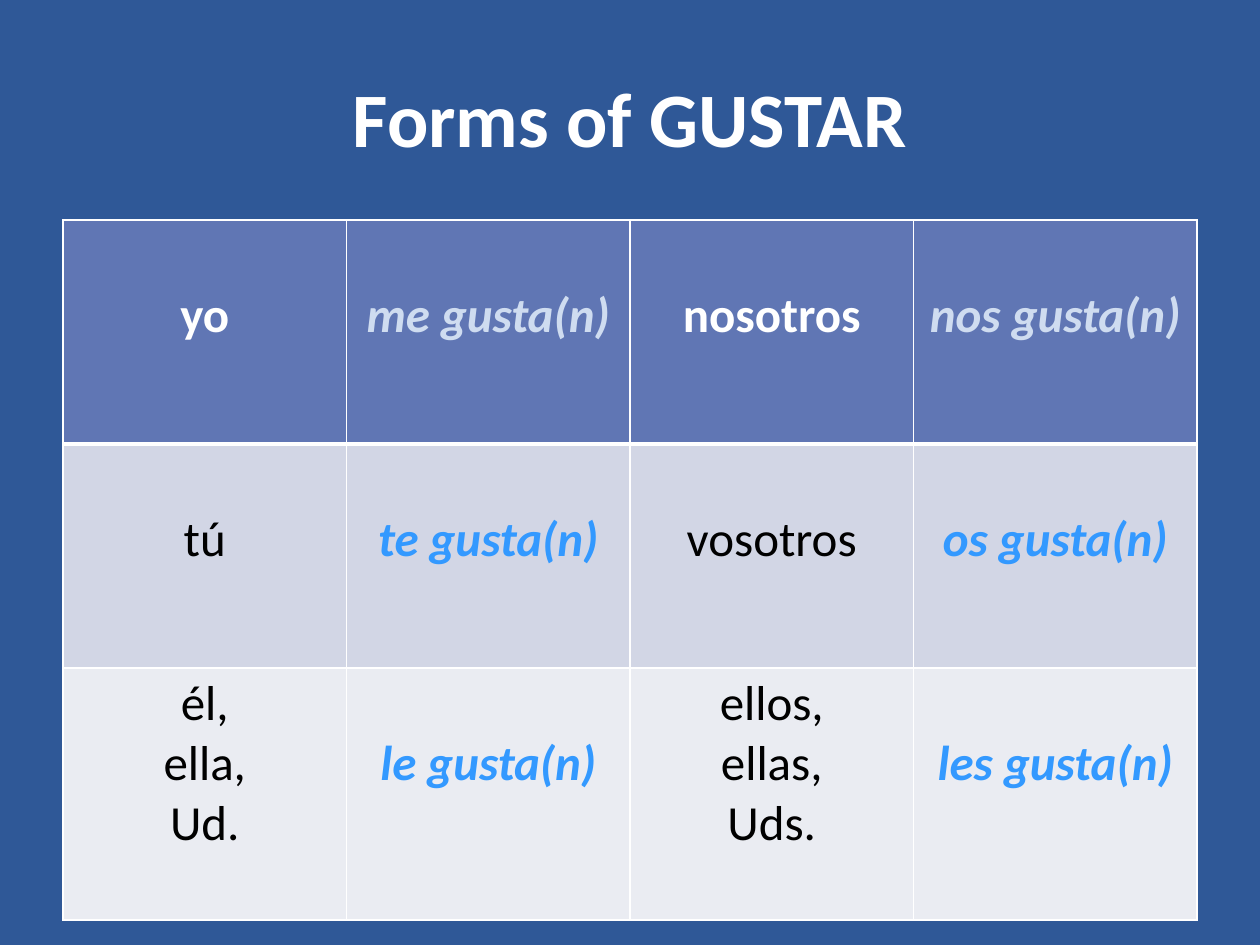
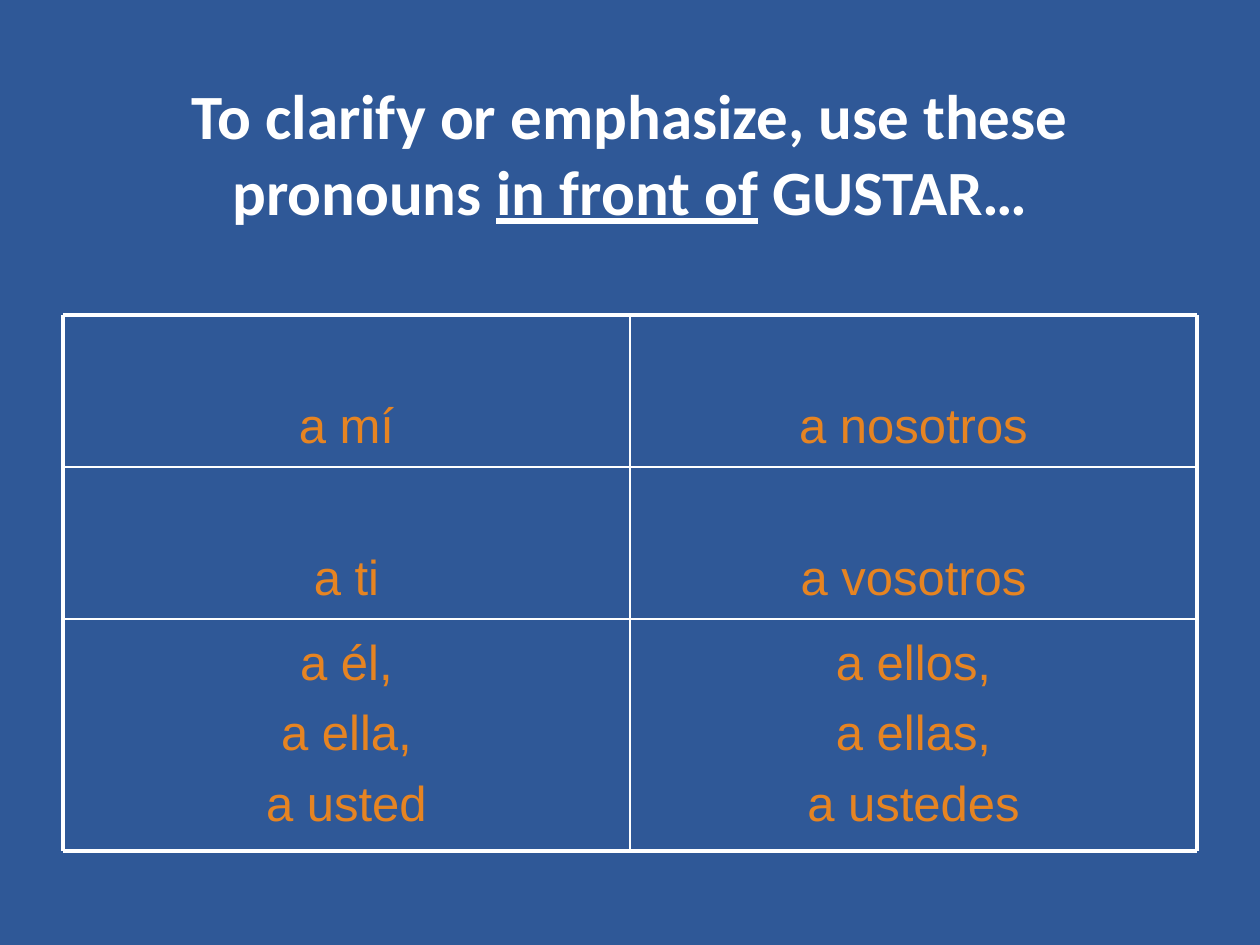
from pptx import Presentation
from pptx.dml.color import RGBColor
from pptx.enum.shapes import MSO_CONNECTOR
from pptx.enum.text import MSO_ANCHOR, PP_ALIGN
from pptx.oxml import parse_xml
from pptx.oxml.ns import nsdecls
from pptx.util import Emu, Pt
from lxml import etree

# Content
FORMS_TITLE = [("Forms of GUSTAR", {})]
FORMS = [
    [["yo"], ["me gusta(n)"], ["nosotros"], ["nos gusta(n)"]],
    [["tú"], ["te gusta(n)"], ["vosotros"], ["os gusta(n)"]],
    [["él,", "ella,", "Ud."], ["le gusta(n)"], ["ellos,", "ellas,", "Uds."], ["les gusta(n)"]],
]
EMPHASIS_TITLE = [
    ("To clarify or emphasize, use these pronouns ", {}),
    ("in front of", {"underline": True}),
    (" GUSTAR…", {}),
]
EMPHASIS = [
    [["a mí"], ["a nosotros"]],
    [["a ti"], ["a vosotros"]],
    [["a él,", "a ella,", "a usted"], ["a ellos,", "a ellas,", "a ustedes"]],
]

# Theme
THEME = {
    "bg": "2F5897", "white": "FFFFFF", "black": "000000",
    "pale": "CFDCF0", "verb": "3399FF", "accent": "E68422",
    "rows": ["6076B4", "D2D6E5", "EAECF2"],
    "head": "Calibri", "body": "Arial",
    "title": 44, "long_title": 36, "text": 28,
    "thin": 1, "outer": 2.25, "rule": 3,
}

# Layout in px, 126 to the inch
SLIDE_W, SLIDE_H = 1260, 945
LEFT, WIDTH = 63, 1134
TITLE_H = 158
FORMS_TOP, FORMS_ROWS = 220, [224, 224, 252]
EMPHASIS_YS = [315, 467, 619, 851]
CELL_PAD, CELL_DROP = 6, 66      # top inset of a full cell and of a one-line cell
BOX_PAD, BOX_DROP, BOX_GAP = 12, 80, 12


def px(n):
    return Emu(round(n * 914400 / 126))


def write(p, runs, **base):
    """Centre a paragraph and fill it with (text, format) runs."""
    p.alignment = PP_ALIGN.CENTER
    for text, extra in runs:
        r = p.add_run()
        r.text = text
        fmt = {**base, **extra}
        r.font.color.rgb = RGBColor.from_string(fmt.pop("color"))
        for name, value in fmt.items():
            setattr(r.font, name, value)


def write_lines(tf, lines, gap=0, **fmt):
    for i, line in enumerate(lines):
        p = tf.add_paragraph() if i else tf.paragraphs[0]
        p.space_before = px(gap if i else 0)
        write(p, [(line, {})], **fmt)


def add_box(s, x, y, w, h):
    tf = s.shapes.add_textbox(px(x), px(y), px(w), px(h)).text_frame
    tf.word_wrap = True
    return tf


def add_title(s, runs, y, size):
    tf = add_box(s, LEFT, y, WIDTH, TITLE_H)
    tf.vertical_anchor = MSO_ANCHOR.MIDDLE
    write(tf.paragraphs[0], runs, name=THEME["head"], size=Pt(size),
          bold=True, color=THEME["white"])


def add_line(s, x1, y1, x2, y2, width):
    c = s.shapes.add_connector(MSO_CONNECTOR.STRAIGHT, px(x1), px(y1), px(x2), px(y2))
    c.line.color.rgb = RGBColor.from_string(THEME["white"])
    c.line.width = Pt(width)
    sp_pr = c._element.spPr
    etree.SubElement(sp_pr, sp_pr.tag.replace("}spPr", "}effectLst").replace(
        "presentationml", "drawingml"))


def set_borders(cell, widths):
    tc_pr = cell._tc.get_or_add_tcPr()
    for side, width in widths.items():
        tc_pr.append(parse_xml(
            f'<a:ln{side} {nsdecls("a")} w="{Pt(width)}"><a:solidFill>'
            f'<a:srgbClr val="{THEME["white"]}"/></a:solidFill></a:ln{side}>'))


def build_forms(s):
    add_title(s, FORMS_TITLE, 38, THEME["title"])
    cols = len(FORMS[0])
    table = s.shapes.add_table(len(FORMS), cols, px(LEFT), px(FORMS_TOP),
                               px(WIDTH), px(sum(FORMS_ROWS))).table
    table.first_row = table.horz_banding = False
    for col in table.columns:
        col.width = px(WIDTH / cols)
    for i, row in enumerate(FORMS):
        table.rows[i].height = px(FORMS_ROWS[i])
        for j, lines in enumerate(row):
            cell = table.cell(i, j)
            header, verb = i == 0, j % 2 == 1
            set_borders(cell, {
                "L": THEME["thin"], "R": THEME["thin"],
                "T": THEME["rule"] if i == 1 else THEME["thin"],
                "B": THEME["rule"] if header else THEME["thin"]})
            cell.fill.solid()
            cell.fill.fore_color.rgb = RGBColor.from_string(THEME["rows"][i])
            cell.margin_top = px(CELL_DROP if len(lines) == 1 else CELL_PAD)
            if verb:
                color = THEME["pale"] if header else THEME["verb"]
            else:
                color = THEME["white"] if header else THEME["black"]
            write_lines(cell.text_frame, lines, name=THEME["head"], size=Pt(THEME["text"]),
                        bold=header or verb, italic=verb, color=color)


def build_emphasis(s):
    add_title(s, EMPHASIS_TITLE, 73, THEME["long_title"])
    ys = EMPHASIS_YS
    cols = len(EMPHASIS[0])
    xs = [LEFT + WIDTH * j // cols for j in range(cols + 1)]
    # Pronouns
    for row, top, bottom in zip(EMPHASIS, ys, ys[1:]):
        for lines, x in zip(row, xs):
            tf = add_box(s, x, top, WIDTH // cols, bottom - top)
            tf.margin_top = px(BOX_DROP if len(lines) == 1 else BOX_PAD)
            write_lines(tf, lines, BOX_GAP, name=THEME["body"],
                        size=Pt(THEME["text"]), color=THEME["accent"])
    # Grid, heavier on the outside
    for y in ys:
        add_line(s, xs[0], y, xs[-1], y, THEME["outer" if y in (ys[0], ys[-1]) else "thin"])
    for x in xs:
        add_line(s, x, ys[0], x, ys[-1], THEME["outer" if x in (xs[0], xs[-1]) else "thin"])


def main():
    prs = Presentation()
    prs.slide_width, prs.slide_height = px(SLIDE_W), px(SLIDE_H)
    bg = prs.slide_master.background.fill
    bg.solid()
    bg.fore_color.rgb = RGBColor.from_string(THEME["bg"])
    for build in (build_forms, build_emphasis):
        build(prs.slides.add_slide(prs.slide_layouts[6]))
    prs.save("out.pptx")


if __name__ == "__main__":
    main()
